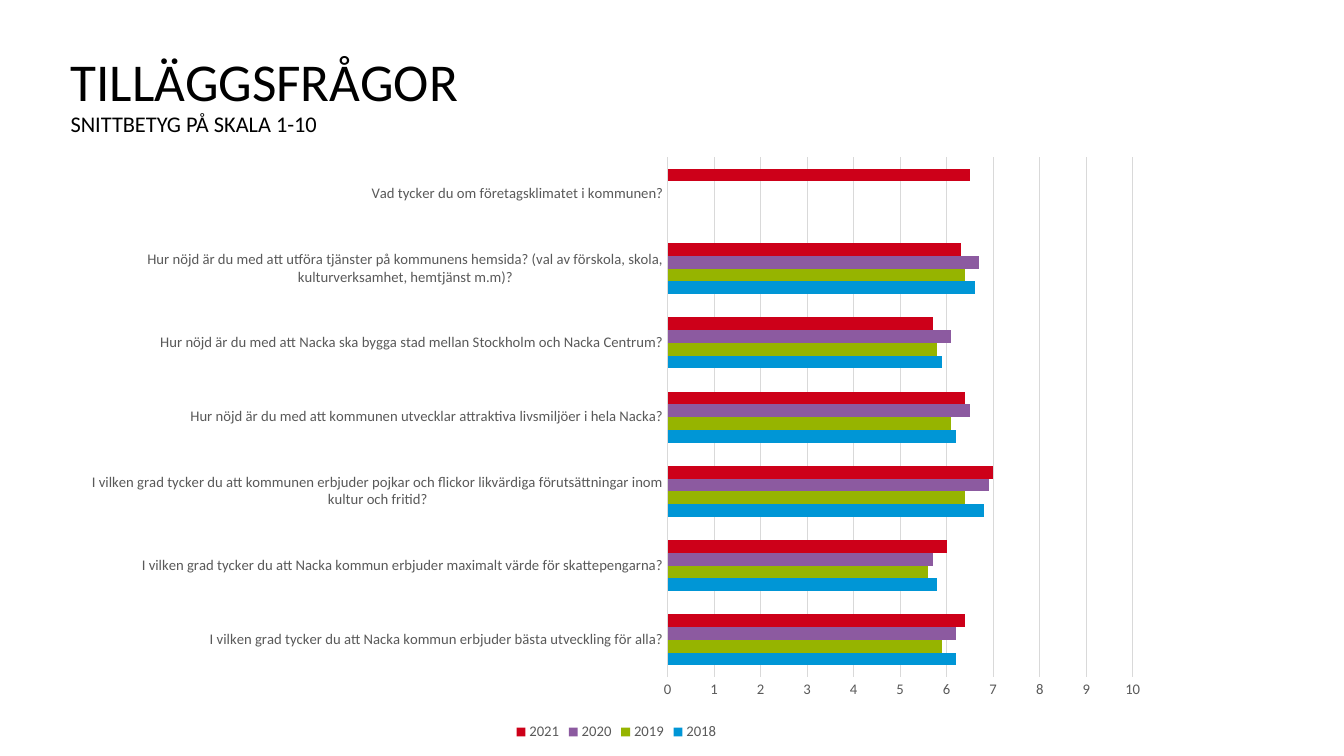
import copy

import pptx
import pptx.chart.data
import pptx.dml.color
import pptx.enum.chart
import pptx.enum.text
import pptx.oxml
import pptx.util

Pt = pptx.util.Pt

TITLE_LINES = [("TILLÄGGSFRÅGOR", 38), ("SNITTBETYG PÅ SKALA 1-10", 16)]
YEARS = ("2018", "2019", "2020", "2021")
SCORES = [
    ("I vilken grad tycker du att Nacka kommun erbjuder bästa utveckling för alla?",
     (6.2, 5.9, 6.2, 6.4)),
    ("I vilken grad tycker du att Nacka kommun erbjuder maximalt värde för skattepengarna?",
     (5.8, 5.6, 5.7, 6)),
    ("I vilken grad tycker du att kommunen erbjuder pojkar och flickor likvärdiga "
     "förutsättningar inom kultur och fritid?", (6.8, 6.4, 6.9, 7)),
    ("Hur nöjd är du med att kommunen utvecklar attraktiva livsmiljöer i hela Nacka?",
     (6.2, 6.1, 6.5, 6.4)),
    ("Hur nöjd är du med att Nacka ska bygga stad mellan Stockholm och Nacka Centrum?",
     (5.9, 5.8, 6.1, 5.7)),
    ("Hur nöjd är du med att utföra tjänster på kommunens hemsida? (val av förskola, "
     "skola, kulturverksamhet, hemtjänst m.m)?", (6.6, 6.4, 6.7, 6.3)),
    ("Vad tycker du om företagsklimatet i kommunen?", (None, None, None, 6.5)),
]

FONT = "Calibri"
COLORS = {"title": "000000", "label": "595959", "grid": "D9D9D9",
          "2018": "0096D6", "2019": "96B400", "2020": "8C5AA0", "2021": "CD0019"}
LEFT = 50.4
TITLE_BOX = (LEFT, 39.6, 611.3, 89.3)
CHART_BOX = (LEFT, 103.7, 779.8, 428.4)
PLOT_AREA = {"x": 0.547, "y": 0.02, "w": 0.426, "h": 0.867}  # shares of the chart


def rgb(name):
    return pptx.dml.color.RGBColor.from_string(COLORS[name])


def format_font(font, size, color):
    font.name = FONT
    font.size = Pt(size)
    font.bold = False
    font.color.rgb = rgb(color)


def add_text(paragraph, text, *, size, color):
    run = paragraph.add_run()
    run.text = text
    format_font(run.font, size, color)
    return run


def add_title(slide):
    title = slide.shapes.title
    title.left, title.top, title.width, title.height = map(Pt, TITLE_BOX)
    frame = title.text_frame
    frame.word_wrap = True
    frame.auto_size = pptx.enum.text.MSO_AUTO_SIZE.NONE
    frame.vertical_anchor = pptx.enum.text.MSO_ANCHOR.TOP
    frame.margin_left = frame.margin_right = frame.margin_top = frame.margin_bottom = 0
    paragraph = frame.paragraphs[0]
    paragraph.alignment = pptx.enum.text.PP_ALIGN.LEFT
    paragraph.line_spacing = 0.9
    paragraph.space_before = Pt(0)
    for index, (text, size) in enumerate(TITLE_LINES):
        if index:
            paragraph.add_line_break()
            # The break takes the size of the line it ends
            paragraph._p[-1].append(copy.deepcopy(run._r.rPr))
        run = add_text(paragraph, text, size=size, color="title")


def place_plot_area(chart):
    values = "".join(f'<c:{key} val="{share}"/>' for key, share in PLOT_AREA.items())
    layout = pptx.oxml.parse_xml(
        '<c:layout xmlns:c="http://schemas.openxmlformats.org/drawingml/2006/chart">'
        '<c:manualLayout><c:layoutTarget val="inner"/>'
        f'<c:xMode val="edge"/><c:yMode val="edge"/>{values}</c:manualLayout></c:layout>')
    plot_area = chart._chartSpace.chart.plotArea
    for old_layout in plot_area.xpath("c:layout"):
        plot_area.remove(old_layout)
    plot_area.insert(0, layout)


def format_line(line):
    line.color.rgb = rgb("grid")
    line.width = Pt(0.75)


def add_score_chart(slide):
    data = pptx.chart.data.CategoryChartData()
    data.categories = [question for question, _ in SCORES]
    for index, year in enumerate(YEARS):
        data.add_series(year, [scores[index] for _, scores in SCORES])
    chart = slide.shapes.add_chart(
        pptx.enum.chart.XL_CHART_TYPE.BAR_CLUSTERED, *map(Pt, CHART_BOX), data).chart
    chart.has_title = False
    format_font(chart.font, 10.5, "title")

    plot = chart.plots[0]
    plot.gap_width = 182
    plot.overlap = 0
    plot.vary_by_categories = False
    for series in plot.series:
        series.format.fill.solid()
        series.format.fill.fore_color.rgb = rgb(series.name)

    category_axis, value_axis = chart.category_axis, chart.value_axis
    for axis in (category_axis, value_axis):
        axis.major_tick_mark = axis.minor_tick_mark = pptx.enum.chart.XL_TICK_MARK.NONE
        format_font(axis.tick_labels.font, 10.5, "label")
    format_line(category_axis.format.line)
    category_axis.has_major_gridlines = False
    value_axis.format.line.fill.background()
    value_axis.has_major_gridlines = True
    format_line(value_axis.major_gridlines.format.line)
    value_axis.minimum_scale, value_axis.maximum_scale, value_axis.major_unit = 0, 10, 1

    chart.has_legend = True
    chart.legend.position = pptx.enum.chart.XL_LEGEND_POSITION.BOTTOM
    chart.legend.include_in_layout = False
    format_font(chart.legend.font, 10.5, "label")
    place_plot_area(chart)


def main():
    presentation = pptx.Presentation()
    presentation.slide_width, presentation.slide_height = Pt(960), Pt(540)
    slide = presentation.slides.add_slide(presentation.slide_layouts[5])
    add_title(slide)
    add_score_chart(slide)
    presentation.save("out.pptx")


if __name__ == "__main__":
    main()
